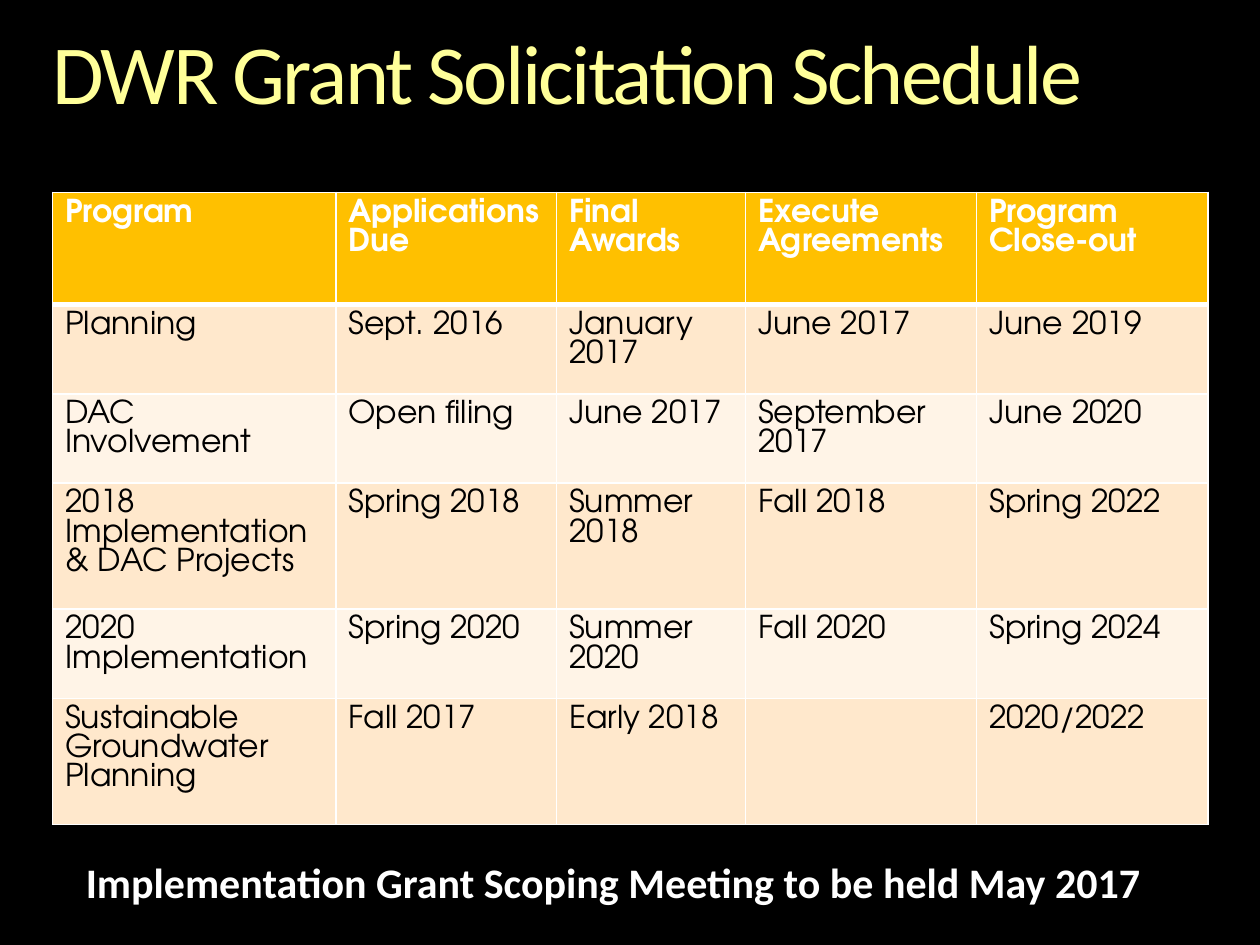
from pptx import Presentation
from pptx.dml.color import RGBColor
from pptx.enum.text import MSO_AUTO_SIZE
from pptx.oxml import parse_xml
from pptx.oxml.ns import nsdecls
from pptx.util import Cm, Pt

FIT_SHAPE = MSO_AUTO_SIZE.SHAPE_TO_FIT_TEXT
BLACK = RGBColor(0x00, 0x00, 0x00)
WHITE = RGBColor(0xFF, 0xFF, 0xFF)
YELLOW = RGBColor(0xFF, 0xFF, 0x99)
GOLD = RGBColor(0xFF, 0xC0, 0x00)
BANDS = RGBColor(0xFF, 0xE8, 0xCC), RGBColor(0xFF, 0xF4, 0xE7)

COLUMN_WIDTHS = [5.71, 4.45, 3.81, 4.66, 4.66]
HEADER_HEIGHT, ROW_HEIGHT = 2.26, 1.8
SCHEDULE = [
    ["Program", "Applications Due", "Final Awards", "Execute Agreements", "Program Close-out"],
    ["Planning", "Sept. 2016", "January 2017", "June 2017", "June 2019"],
    ["DAC Involvement", "Open filing", "June 2017", "September 2017", "June 2020"],
    ["2018 Implementation & DAC Projects", "Spring 2018", "Summer 2018", "Fall 2018", "Spring 2022"],
    ["2020 Implementation", "Spring 2020", "Summer 2020", "Fall 2020", "Spring 2024"],
    ["Sustainable Groundwater Planning", "Fall 2017", "Early 2018", "", "2020/2022"],
]


class SlideBuilder:
    text_font = "Calibri"
    table_font = "TeX Gyre Adventor"
    table_size = 18

    def __init__(self, prs):
        self.s = prs.slides.add_slide(prs.slide_layouts[6])
        self.s.background.fill.solid()
        self.s.background.fill.fore_color.rgb = BLACK

    def format_font(self, font, name, size, color, bold=False):
        font.name = name
        font.size = Pt(size)
        font.bold = bold
        font.color.rgb = color

    def text(self, left, top, width, height, text, size, color, bold=False, wrap=True):
        tf = self.s.shapes.add_textbox(Cm(left), Cm(top), Cm(width), Cm(height)).text_frame
        tf.word_wrap = wrap
        tf.auto_size = FIT_SHAPE
        tf.text = text
        self.format_font(tf.paragraphs[0].runs[0].font, self.text_font, size, color, bold)
        return tf

    def title(self, left, top, width, height, text):
        tf = self.text(left, top, width, height, text, 48, YELLOW)
        tf.margin_left = tf.margin_top = tf.margin_right = tf.margin_bottom = 0
        p = tf.paragraphs[0]
        p.line_spacing = 0.9
        p.runs[0].font._element.set("spc", "-150")

    def borders(self, cell, bottom):
        tc_pr = cell._tc.get_or_add_tcPr()
        for side, points in (("L", 1), ("R", 1), ("T", 1), ("B", bottom)):
            tc_pr.append(parse_xml(
                f'<a:ln{side} {nsdecls("a")} w="{Pt(points)}"><a:solidFill>'
                f'<a:srgbClr val="{WHITE}"/></a:solidFill></a:ln{side}>'))

    def cell(self, cell, text, header, fill):
        self.borders(cell, 3 if header else 1)
        cell.fill.solid()
        cell.fill.fore_color.rgb = fill
        cell.text = text
        p = cell.text_frame.paragraphs[0]
        for font in [p.font] + [r.font for r in p.runs]:
            self.format_font(font, self.table_font, self.table_size,
                             WHITE if header else BLACK, header)

    def table(self, left, top, widths, heights, rows):
        table = self.s.shapes.add_table(
            len(rows), len(widths), Cm(left), Cm(top), Cm(sum(widths)), Cm(sum(heights))).table
        for column, width in zip(table.columns, widths):
            column.width = Cm(width)
        for i, (values, height) in enumerate(zip(rows, heights)):
            table.rows[i].height = Cm(height)
            fill = BANDS[(i - 1) % 2] if i else GOLD
            for j, value in enumerate(values):
                self.cell(table.cell(i, j), value, i == 0, fill)


def main():
    prs = Presentation()
    prs.slide_width, prs.slide_height = Cm(25.4), Cm(19.05)
    slide = SlideBuilder(prs)
    slide.title(1.06, 0.64, 23.29, 1.85, "DWR Grant Solicitation Schedule")
    heights = [HEADER_HEIGHT] + [ROW_HEIGHT] * (len(SCHEDULE) - 1)
    slide.table(1.06, 3.88, COLUMN_WIDTHS, heights, SCHEDULE)
    slide.text(1.48, 17.15, 22, 1.27, "Implementation Grant Scoping Meeting to be held May 2017",
               24, WHITE, bold=True, wrap=False)
    prs.save("out.pptx")


if __name__ == "__main__":
    main()
